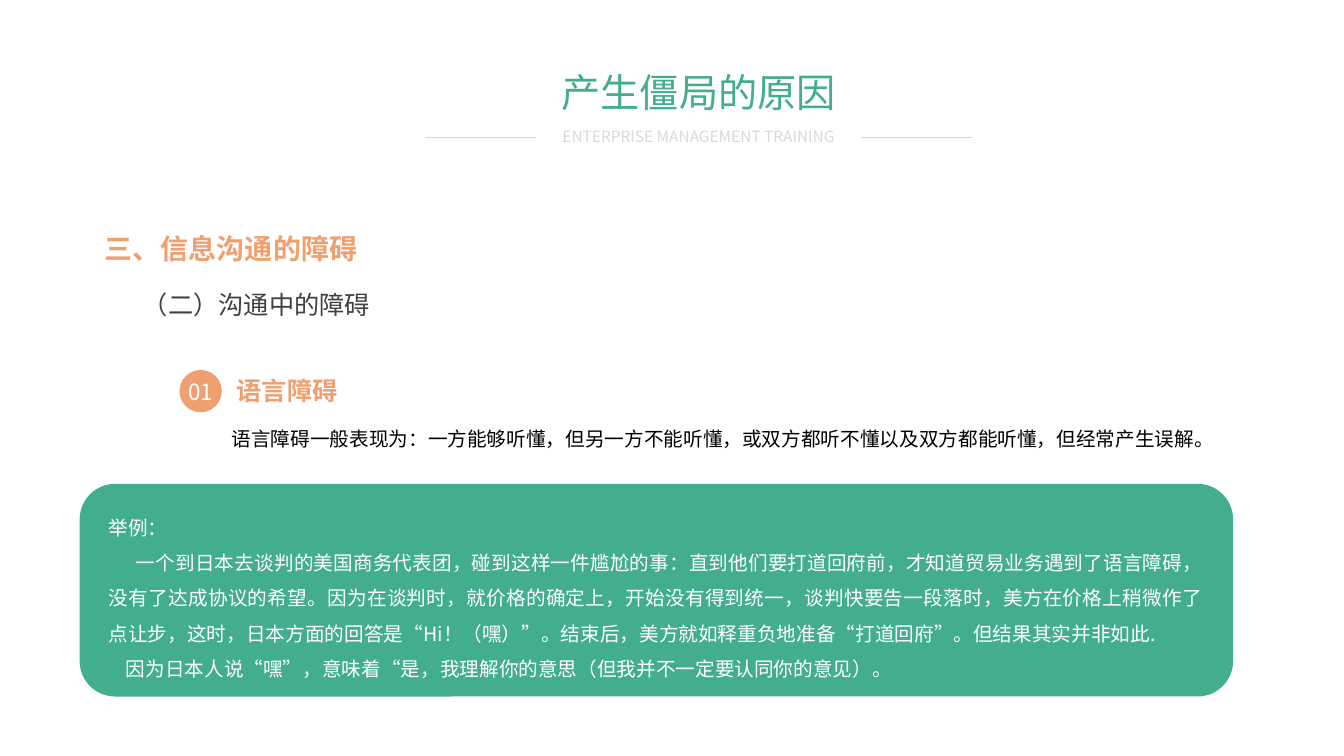
from lxml import etree
from pptx import Presentation
from pptx.dml.color import RGBColor
from pptx.enum.lang import MSO_LANGUAGE_ID
from pptx.enum.shapes import MSO_CONNECTOR, MSO_SHAPE
from pptx.enum.text import MSO_ANCHOR, MSO_AUTO_SIZE, PP_ALIGN
from pptx.oxml.ns import qn
from pptx.util import Inches, Pt

GREEN = RGBColor(0x42, 0xAE, 0x8E)
ORANGE = RGBColor(0xEE, 0xA0, 0x71)
GRAY = RGBColor(0xD9, 0xD9, 0xD9)
DARK = RGBColor(0x40, 0x40, 0x40)
BLACK = RGBColor(0, 0, 0)
WHITE = RGBColor(0xFF, 0xFF, 0xFF)
LEFT, CENTER, JUSTIFY = PP_ALIGN.LEFT, PP_ALIGN.CENTER, PP_ALIGN.JUSTIFY
OVAL, ROUND = MSO_SHAPE.OVAL, MSO_SHAPE.ROUNDED_RECTANGLE
STRAIGHT = MSO_CONNECTOR.STRAIGHT
MIDDLE = MSO_ANCHOR.MIDDLE
GROW = MSO_AUTO_SIZE.SHAPE_TO_FIT_TEXT
CHINESE = MSO_LANGUAGE_ID.SIMPLIFIED_CHINESE
FONT = "Noto Sans CJK SC"

deck = Presentation()
deck.slide_width, deck.slide_height = Inches(13.33), Inches(7.5)
slide = deck.slides.add_slide(deck.slide_layouts[6])
shapes = slide.shapes


def write(para, text, size=14, color=BLACK, bold=False, align=LEFT, space=None, indent=0):
    para.alignment = align
    para.line_spacing = space
    run = para.add_run()
    run.text = text
    font = run.font
    font.name, font.size, font.bold = FONT, Pt(size), bold
    font.color.rgb = color
    font.language_id = CHINESE
    props = run._r.get_or_add_rPr()
    etree.SubElement(props, qn("a:ea")).set("typeface", FONT)
    if indent:
        para._p.get_or_add_pPr().set("indent", str(Inches(indent)))


def add_box(left, top, width, height, wrap=True):
    frame = shapes.add_textbox(Inches(left), Inches(top), Inches(width), Inches(height)).text_frame
    frame.word_wrap = wrap
    frame.auto_size = GROW
    return frame


for left in (4.22, 8.54):
    rule = shapes.add_connector(STRAIGHT, Inches(left), Inches(1.36), Inches(left + 1.1), Inches(1.36))
    rule.line.color.rgb = GRAY
    rule.line.width = Pt(0.5)
    etree.SubElement(rule._element.spPr, qn("a:effectLst"))

for kind, color, left, top, width, height in (
    (OVAL, ORANGE, 1.78, 3.67, 0.42, 0.42),
    (ROUND, GREEN, 0.79, 4.8, 11.44, 2.11),
):
    shape = shapes.add_shape(kind, Inches(left), Inches(top), Inches(width), Inches(height))
    shape.shadow.inherit = False
    shape.fill.solid()
    shape.fill.fore_color.rgb = color
    shape.line.fill.background()
    if kind == OVAL:
        frame = shape.text_frame
        frame.margin_left = frame.margin_right = frame.margin_top = frame.margin_bottom = 0
        frame.vertical_anchor = MIDDLE
        frame.word_wrap = False
        write(frame.paragraphs[0], "01", size=16, color=WHITE, align=CENTER)

for place, text, style in (
    ((5.32, 1.21, 3.22, 0.29), "ENTERPRISE MANAGEMENT TRAINING", dict(size=11, color=GRAY, align=CENTER)),
    ((5.36, 0.63, 3.14, 0.57), "产生僵局的原因", dict(size=28, color=GREEN, align=CENTER)),
    ((0.94, 2.25, 6.75, 0.44), "三、信息沟通的障碍", dict(size=20, color=ORANGE, bold=True)),
    ((1.32, 2.82, 5.67, 0.4), "（二）沟通中的障碍", dict(size=18, color=DARK)),
    ((2.25, 3.67, 1.22, 0.4, False), "语言障碍", dict(size=18, color=ORANGE, bold=True)),
    (
        (1.9, 4.07, 10.37, 0.41),
        "语言障碍一般表现为：一方能够听懂，但另一方不能听懂，或双方都听不懂以及双方都能听懂，但经常产生误解。",
        dict(space=1.5, indent=0.3),
    ),
):
    write(add_box(*place).paragraphs[0], text, **style)

story = (
    ("举例：", 0),
    (
        "一个到日本去谈判的美国商务代表团，碰到这样一件尴尬的事：直到他们要打道回府前，才知道贸易业务遇到了语言障碍，"
        "没有了达成协议的希望。因为在谈判时，就价格的确定上，开始没有得到统一，谈判快要告一段落时，美方在价格上稍微作了"
        "点让步，这时，日本方面的回答是“Hi！（嘿）”。结束后，美方就如释重负地准备“打道回府”。但结果其实并非如此.",
        0.27,
    ),
    ("因为日本人说“嘿”，意味着“是，我理解你的意思（但我并不一定要认同你的意见）。", 0.17),
)
frame = add_box(0.98, 4.95, 11.05, 1.87)
for row, (text, indent) in enumerate(story):
    para = frame.add_paragraph() if row else frame.paragraphs[0]
    write(para, text, color=WHITE, align=JUSTIFY, space=1.5, indent=indent)

deck.save("out.pptx")
